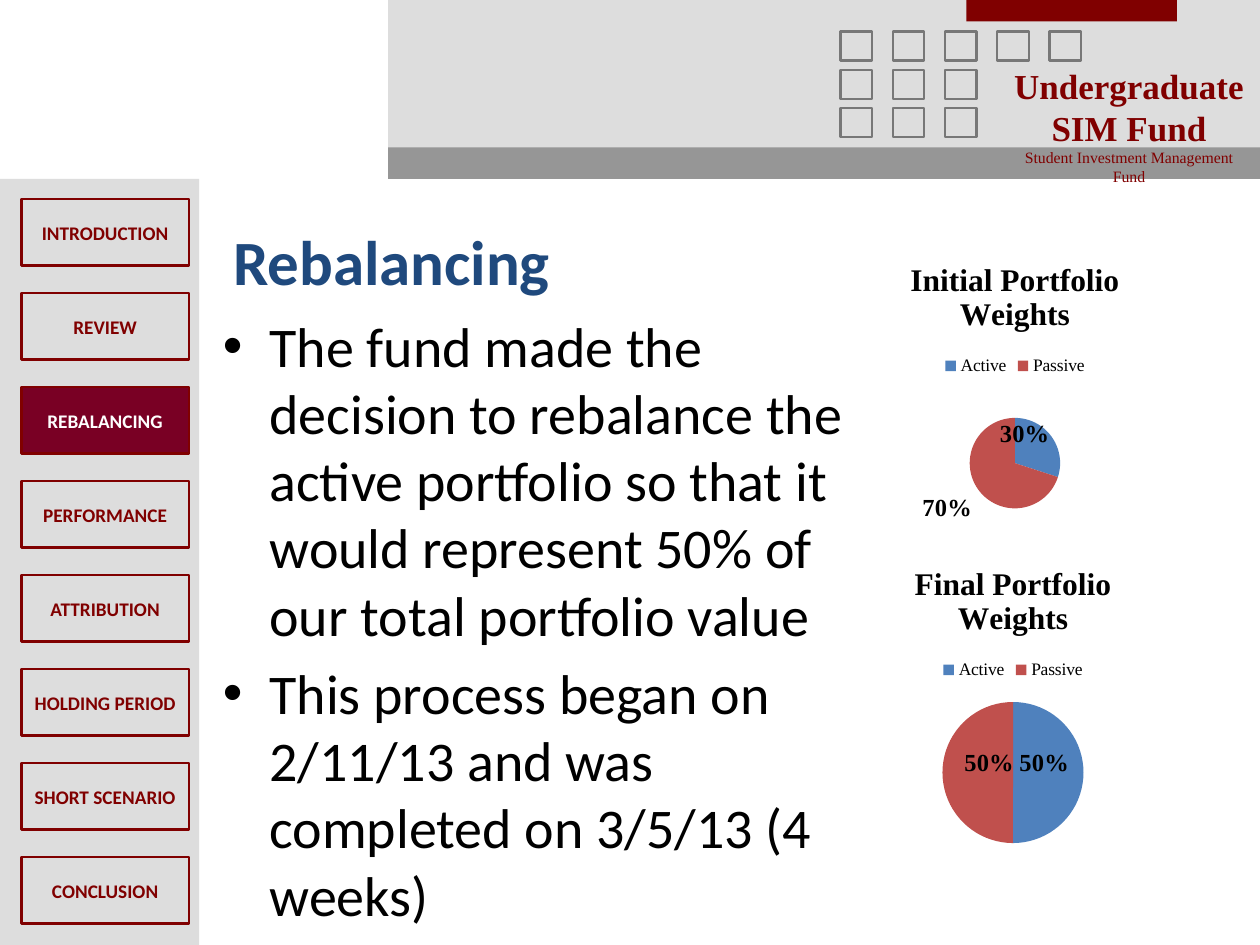
from lxml import etree
from pptx import Presentation
from pptx.chart.data import CategoryChartData
from pptx.dml.color import RGBColor
from pptx.enum.chart import XL_CHART_TYPE, XL_LABEL_POSITION, XL_LEGEND_POSITION
from pptx.enum.shapes import MSO_SHAPE
from pptx.enum.text import MSO_ANCHOR, PP_ALIGN
from pptx.oxml.ns import qn
from pptx.util import Inches, Pt

RECT = MSO_SHAPE.RECTANGLE
PIE = XL_CHART_TYPE.PIE
LEGEND_TOP = XL_LEGEND_POSITION.TOP
CENTER = PP_ALIGN.CENTER
LEFT = PP_ALIGN.LEFT
MIDDLE = MSO_ANCHOR.MIDDLE
LABEL_BEST = XL_LABEL_POSITION.BEST_FIT
LABEL_CENTER = XL_LABEL_POSITION.CENTER

SANS, SERIF = "Calibri", "Times New Roman"
MAROON, PALE, BLACK = "800000", "DDDDDD", "000000"

SECTIONS = ["INTRODUCTION", "REVIEW", "REBALANCING", "PERFORMANCE",
            "ATTRIBUTION", "HOLDING PERIOD", "SHORT SCENARIO", "CONCLUSION"]
CURRENT = "REBALANCING"
POINTS = [
    "The fund made the decision to rebalance the active portfolio so that it "
    "would represent 50% of our total portfolio value",
    "This process began on 2/11/13 and was completed on 3/5/13 (4 weeks)",
]


def rgb(value):
    return RGBColor.from_string(value)


def set_font(font, size, color, name, bold=False):
    font.size, font.name, font.bold = Pt(size), name, bold
    font.color.rgb = rgb(color)


def add_run(p, text, *style):
    r = p.add_run()
    r.text = text
    set_font(r.font, *style)


def add_rect(slide, x, y, w, h, fill=None, line=None, weight=1.5):
    sp = slide.shapes.add_shape(RECT, Inches(x), Inches(y), Inches(w), Inches(h))
    sp.shadow.inherit = False
    if fill:
        sp.fill.solid()
        sp.fill.fore_color.rgb = rgb(fill)
    else:
        sp.fill.background()
    if line:
        sp.line.color.rgb = rgb(line)
        sp.line.width = Pt(weight)
    else:
        sp.line.fill.background()
    return sp


def add_header(slide, x, y, w, h):
    add_rect(slide, x, y, w, h, PALE)
    add_rect(slide, x + 4.59, y, 1.67, 0.17, MAROON)
    for row, count in enumerate([5, 3, 3]):
        for col in range(count):
            add_rect(slide, x + 3.59 + col * 0.415, y + 0.25 + row * 0.305,
                     0.25, 0.23, line="777777", weight=1.3)
    add_rect(slide, x, y + h - 0.25, w, 0.25, "969696")

    box = slide.shapes.add_textbox(Inches(x + 4.92), Inches(y + 0.51),
                                   Inches(1.92), Inches(1.3))
    tf = box.text_frame
    tf.word_wrap = True
    tf.margin_left = tf.margin_right = tf.margin_top = tf.margin_bottom = 0
    lines = [("Undergraduate", 20, True), ("SIM Fund", 20, True),
             ("Student Investment Management Fund", 9, False)]
    for i, (text, size, bold) in enumerate(lines):
        p = tf.add_paragraph() if i else tf.paragraphs[0]
        p.alignment = CENTER
        add_run(p, text, size, MAROON, SERIF, bold)


def add_menu(slide, x, y, w, h):
    add_rect(slide, x, y, w, h, PALE)
    for i, name in enumerate(SECTIONS):
        current = name == CURRENT
        sp = add_rect(slide, x + 0.17, y + 0.16 + i * 0.746, 1.33, 0.53,
                      "790024" if current else None, MAROON)
        tf = sp.text_frame
        tf.word_wrap = False
        tf.vertical_anchor = MIDDLE
        p = tf.paragraphs[0]
        p.alignment = CENTER
        add_run(p, name, 11, "FFFFFF" if current else MAROON, SANS, True)


def add_title(slide, x, y, w, h):
    title = slide.shapes.title
    title.left, title.top = Inches(x), Inches(y)
    title.width, title.height = Inches(w), Inches(h)
    tf = title.text_frame
    tf.vertical_anchor = MIDDLE
    p = tf.paragraphs[0]
    p.alignment = LEFT
    add_run(p, "Rebalancing", 36, "1F497D", SANS, True)


def add_bullets(slide, x, y, w, h):
    box = slide.shapes.add_textbox(Inches(x), Inches(y), Inches(w), Inches(h))
    tf = box.text_frame
    tf.word_wrap = True
    for i, text in enumerate(POINTS):
        p = tf.add_paragraph() if i else tf.paragraphs[0]
        p.space_before = Pt(6.4 if i else 0)
        pPr = p._p.get_or_add_pPr()
        pPr.set("marL", str(Inches(0.37)))
        pPr.set("indent", str(-Inches(0.37)))
        etree.SubElement(pPr, qn("a:buFont"), typeface="Arial")
        etree.SubElement(pPr, qn("a:buChar"), char="•")
        add_run(p, text, 32, BLACK, SANS)


def shift_label(point, dx, dy, position):
    """Move one percentage label by fractions of the chart's size."""
    label = point.data_label
    label.position = position
    dLbl = label._dLbl
    for tag in ("c:showVal", "c:showPercent"):
        dLbl.find(qn(tag)).set("val", "1" if tag == "c:showPercent" else "0")
    layout = etree.Element(qn("c:layout"))
    manual = etree.SubElement(layout, qn("c:manualLayout"))
    etree.SubElement(manual, qn("c:x"), val=str(dx))
    etree.SubElement(manual, qn("c:y"), val=str(dy))
    dLbl.find(qn("c:idx")).addnext(layout)


def add_weights_pie(slide, x, y, w, h, title, weights, shifts, position):
    data = CategoryChartData()
    data.categories = ["Active", "Passive"]
    data.add_series("Series 1", weights)
    chart = slide.shapes.add_chart(PIE, Inches(x), Inches(y), Inches(w),
                                   Inches(h), data).chart
    set_font(chart.font, 10, BLACK, SERIF)
    chart.has_title = True
    add_run(chart.chart_title.text_frame.paragraphs[0], title, 18, BLACK, SERIF, True)
    chart.chart_title.include_in_layout = False
    chart.has_legend = True
    chart.legend.position = LEGEND_TOP
    chart.legend.include_in_layout = False

    plot = chart.plots[0]
    plot.vary_by_categories = True
    series = plot.series[0]
    for i, color in enumerate(["4F81BD", "C0504D"]):
        fill = series.points[i].format.fill
        fill.solid()
        fill.fore_color.rgb = rgb(color)
    labels = series.data_labels
    labels.show_percentage, labels.show_value = True, False
    labels.position = position
    set_font(labels.font, 14, BLACK, SERIF, True)
    for i, (dx, dy) in enumerate(shifts):
        shift_label(series.points[i], dx, dy, position)
        set_font(series.points[i].data_label.font, 14, BLACK, SERIF, True)


def main():
    prs = Presentation()
    prs.slide_width, prs.slide_height = Inches(10), Inches(7.5)
    slide = prs.slides.add_slide(prs.slide_layouts[5])
    add_header(slide, 3.08, 0, 6.92, 1.42)
    add_menu(slide, 0, 1.42, 1.58, 6.08)
    add_title(slide, 1.75, 1.65, 7.75, 0.83)
    add_bullets(slide, 1.67, 2.42, 5.25, 4.95)
    add_weights_pie(slide, 6.42, 1.92, 3.27, 2.41, "Initial Portfolio Weights",
                    [30, 70], [(-0.14, 0.05)], LABEL_BEST)
    add_weights_pie(slide, 6.5, 4.33, 3.08, 2.5, "Final Portfolio Weights",
                    [50, 50], [(-0.01, -0.03), (0.03, -0.03)], LABEL_CENTER)
    prs.save("out.pptx")


if __name__ == "__main__":
    main()
